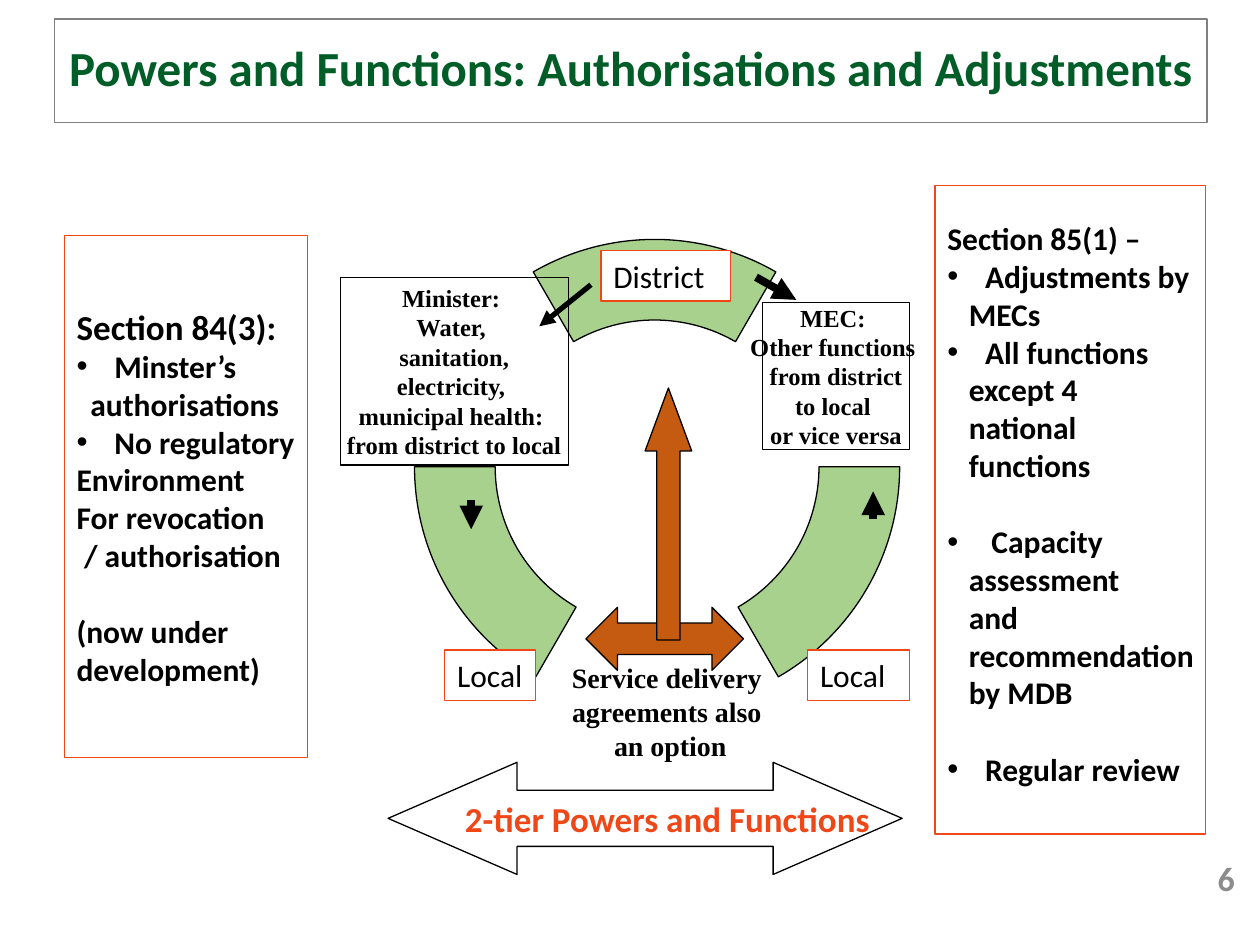
from dataclasses import dataclass

from lxml.etree import SubElement
from pptx import Presentation
from pptx.dml.color import RGBColor
from pptx.enum.shapes import MSO_CONNECTOR, MSO_SHAPE
from pptx.enum.text import MSO_ANCHOR, PP_ALIGN
from pptx.oxml.ns import qn
from pptx.util import Inches, Pt

BLACK, WHITE, ORANGE = "000000", "FFFFFF", "EF4718"
GREEN, DARK_GREEN, BROWN, GREY = "A9D18E", "005D28", "C55A11", "808080"
SERIF = "Times New Roman"


@dataclass
class Line:
    """One paragraph: indent in inches, space before in points."""
    text: str
    indent: float = 0
    bullet: bool = False
    before: float = 0
    size: float | None = None


@dataclass
class Arrow:
    start: tuple[float, float]
    end: tuple[float, float]
    width: float


def rgb(value: str) -> RGBColor:
    return RGBColor.from_string(value)


def add_box(s, at, kind=MSO_SHAPE.RECTANGLE, fill=None, line=BLACK, adj=()):
    sp = s.shapes.add_shape(kind, *map(Inches, at))
    sp.shadow.inherit = False
    for i, value in enumerate(adj):
        sp.adjustments[i] = value
    if fill:
        sp.fill.solid()
        sp.fill.fore_color.rgb = rgb(fill)
    else:
        sp.fill.background()
    sp.line.color.rgb = rgb(line)
    sp.line.width = Pt(0.75)
    return sp


def write(sp, lines, size=18, font="Calibri", color=BLACK, bold=True, align=PP_ALIGN.LEFT,
          wrap=False, insets=(0.1, 0.05, 0.1, 0.05), spacing=None):
    tf = sp.text_frame
    tf.word_wrap = wrap
    tf.vertical_anchor = MSO_ANCHOR.MIDDLE
    tf.margin_left, tf.margin_top, tf.margin_right, tf.margin_bottom = map(Inches, insets)
    for i, line in enumerate(lines):
        if isinstance(line, str):
            line = Line(line)
        p = tf.paragraphs[0] if i == 0 else tf.add_paragraph()
        p.alignment = align
        if spacing:
            p.line_spacing = spacing
        if line.before:
            p.space_before = Pt(line.before)
        if line.indent:
            pPr = p._p.get_or_add_pPr()
            pPr.set("marL", str(Inches(line.indent)))
            if line.bullet:
                pPr.set("indent", str(-Inches(line.indent)))
                SubElement(pPr, qn("a:buFont"), typeface="Arial")
                SubElement(pPr, qn("a:buChar"), char="•")
        r = p.add_run()
        r.text = line.text
        r.font.size = Pt(line.size or size)
        r.font.name = font
        r.font.bold = bold
        r.font.color.rgb = rgb(color)


def add_arrow(s, arrow: Arrow) -> None:
    c = s.shapes.add_connector(MSO_CONNECTOR.STRAIGHT, *map(Inches, arrow.start + arrow.end))
    c.line.color.rgb = rgb(BLACK)
    c.line.width = Pt(arrow.width)
    SubElement(c.line._get_or_add_ln(), qn("a:tailEnd"), type="triangle")
    SubElement(c._element.spPr, qn("a:effectLst"))


def bullet(text: str, indent: float = 0.3, before: float = 0) -> Line:
    return Line(text, indent, True, before)


def add_ring(s) -> None:
    """Three 60-degree segments, one per sphere of government."""
    size, thickness = 3.85, 0.64
    for left, top, start in ((3.27, 1.9, 240), (3.29, 1.78, 0), (3.29, 1.78, 120)):
        # Angle adjustments are 60000ths of a degree, scaled down by 100000
        add_box(s, (left, top, size, size), MSO_SHAPE.BLOCK_ARC, GREEN,
                adj=(start * 0.6, (start + 60) * 0.6, thickness / size))


def main() -> None:
    prs = Presentation()
    prs.slide_width, prs.slide_height = Inches(10), Inches(7.5)
    s = prs.slides.add_slide(prs.slide_layouts[6])

    number = s.shapes.add_textbox(*map(Inches, (9.26, 6.72, 0.64, 0.5)))
    write(number, ["6"], size=19.4, color="8C8C8C", align=PP_ALIGN.RIGHT, wrap=True)
    title = add_box(s, (0.43, 0.15, 9.15, 0.82), fill=WHITE, line=GREY)
    write(title, ["Powers and Functions: Authorisations and Adjustments"], size=28,
          color=DARK_GREEN, align=PP_ALIGN.CENTER, spacing=0.9)

    add_ring(s)
    note = dict(font=SERIF, align=PP_ALIGN.CENTER, insets=(0.06, 0.03, 0.06, 0.03))
    write(add_box(s, (6.05, 2.4, 1.17, 1.17)),
          ["MEC: ", "Other functions ", "from district", "to local ", "or vice versa"],
          size=14, **note)
    write(s.shapes.add_textbox(*map(Inches, (4.42, 5.06, 1.8, 1.17))),
          ["Service delivery ", "agreements also ", "an option"], size=16, wrap=True, **note)
    write(add_box(s, (2.7, 2.2, 1.81, 1.49)),
          ["Minister: ", "Water, ", "sanitation,", "electricity, ", "municipal health: ",
           "from district to local"], size=14, **note)

    for text, left, top, width in (("District", 4.77, 1.99, 1.03),
                                   ("Local", 3.53, 5.16, 0.72),
                                   ("Local", 6.41, 5.16, 0.81)):
        label = add_box(s, (left, top, width, 0.4), fill=WHITE, line=ORANGE)
        write(label, [text], bold=False, wrap=True)

    for arrow in (Arrow((4.69, 2.26), (4.28, 2.59), 3),
                  Arrow((3.74, 3.97), (3.74, 4.2), 4.5),
                  Arrow((6, 2.2), (6.32, 2.38), 4.5),
                  Arrow((6.93, 4.12), (6.93, 3.9), 4.5)):
        add_arrow(s, arrow)
    add_box(s, (4.65, 4.82, 1.25, 0.5), MSO_SHAPE.LEFT_RIGHT_ARROW, BROWN, adj=(0.5, 0.5))
    add_box(s, (5.12, 3.08, 0.37, 2), MSO_SHAPE.UP_ARROW, BROWN, adj=(0.5, 1.35))

    gap = 22  # one line of body text
    section_84 = add_box(s, (0.51, 1.87, 1.93, 4.14), fill=WHITE, line=ORANGE)
    write(section_84, [
        Line("Section 84(3):", size=20),
        bullet("Minster’s"), Line("authorisations", 0.11),
        bullet("No regulatory"), "Environment", "For revocation",
        Line("/ authorisation", 0.06),
        Line("(now under", before=gap), "development)"])

    hang = 0.17
    section_85 = add_box(s, (7.42, 1.47, 2.15, 5.15), fill=WHITE, line=ORANGE)
    write(section_85, [
        "Section 85(1) –",
        bullet("Adjustments by"), Line("MECs", hang),
        bullet("All functions"),
        *(Line(text, hang) for text in ("except 4", "national", "functions")),
        bullet("Capacity", 0.35, gap),
        *(Line(text, hang) for text in ("assessment", "and", "recommendation", "by MDB")),
        bullet("Regular review", before=gap)], insets=(0.1, 0.05, 0.1, 0.15))

    two_tier = add_box(s, (3.08, 6.05, 4.08, 0.89), MSO_SHAPE.LEFT_RIGHT_ARROW, WHITE,
                       adj=(0.5, 1.15))
    write(two_tier, ["2-tier Powers and Functions"], size=20, color=ORANGE)

    prs.save("out.pptx")


if __name__ == "__main__":
    main()
